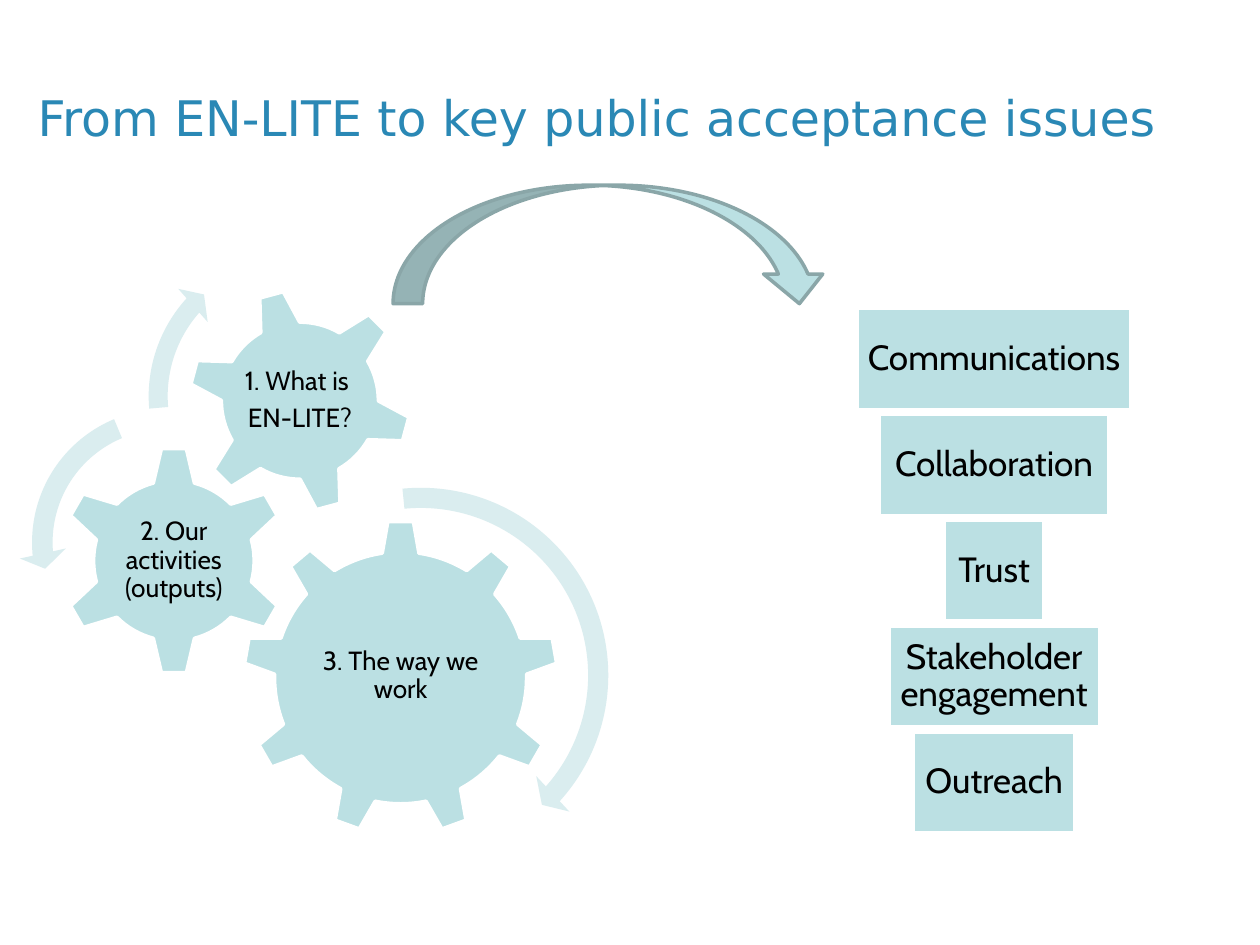
from pptx import Presentation
from pptx.dml.color import RGBColor
from pptx.enum.shapes import MSO_SHAPE
from pptx.enum.text import MSO_ANCHOR, PP_ALIGN
from pptx.util import Inches, Pt

BLACK = RGBColor(0x00, 0x00, 0x00)
WHITE = RGBColor(0xFF, 0xFF, 0xFF)
BLUE = RGBColor(0x2A, 0x88, 0xB5)
TEAL = RGBColor(0xBB, 0xE0, 0xE3)
PALE_TEAL = RGBColor(0xDA, 0xED, 0xEF)
GREY_TEAL = RGBColor(0x8A, 0xA6, 0xA8)

presentation = Presentation()
presentation.slide_width = Inches(10)
presentation.slide_height = Inches(7.5)
slide = presentation.slides.add_slide(presentation.slide_layouts[6])


def add_filled_shape(kind, box, fill, line=None):
    shape = slide.shapes.add_shape(kind, *map(Inches, box))
    shape.shadow.inherit = False
    shape.fill.solid()
    shape.fill.fore_color.rgb = fill
    if line is None:
        shape.line.fill.background()
    else:
        shape.line.color.rgb = line
        shape.line.width = Pt(2)
    return shape


def write_text(shape, lines, inset, paragraph_format, font_format):
    frame = shape.text_frame
    frame.text = "\n".join(lines)
    frame_format = {"word_wrap": True, "vertical_anchor": MSO_ANCHOR.MIDDLE}
    for side in ("left", "top", "right", "bottom"):
        frame_format[f"margin_{side}"] = Inches(inset)
    for name, value in frame_format.items():
        setattr(frame, name, value)
    for paragraph in frame.paragraphs:
        for name, value in paragraph_format.items():
            setattr(paragraph, name, value)
        for run in paragraph.runs:
            run.font.color.rgb = font_format["color"]
            run.font.name = font_format["name"]
            run.font.size = font_format["size"]


label_paragraph = {
    "alignment": PP_ALIGN.CENTER,
    "line_spacing": 0.9,
    "space_after": Pt(5),
}
gear_font = {"name": "Cabin", "size": Pt(15), "color": BLACK}
issue_font = {"name": "Cabin", "size": Pt(20), "color": BLACK}
title_font = {"name": "DejaVu Sans", "size": Pt(28), "color": BLUE}

title = slide.shapes.add_textbox(Inches(0.2), Inches(0.3), Inches(9.53), Inches(1.25))
write_text(title, ["From EN-LITE to key public acceptance issues"], 0.1,
           {"alignment": PP_ALIGN.LEFT}, title_font)

gears = [
    (MSO_SHAPE.GEAR_9, (1.93, 4.13, 2.5, 2.5), 0,
     (2.43, 4.72, 1.5, 1.29), ["3. The way we work"]),
    (MSO_SHAPE.GEAR_6, (0.47, 3.54, 1.82, 1.82), 0,
     (0.93, 4, 0.9, 0.9), ["2. Our activities (outputs)"]),
    (MSO_SHAPE.GEAR_6, (1.49, 2.29, 1.78, 1.78), 345,
     (1.88, 2.68, 1, 1), ["1. What is ", "EN-LITE?"]),
]
for kind, box, rotation, label_box, lines in gears:
    gear = add_filled_shape(kind, box, TEAL, WHITE)
    gear.rotation = rotation
    label = slide.shapes.add_textbox(*map(Inches, label_box))
    write_text(label, lines, 0.02, label_paragraph, gear_font)

rotation_arrows = [
    (MSO_SHAPE.CIRCULAR_ARROW, (1.74, 3.76, 3.2, 3.2),
     (0.05, 2.99, 25.16, 158.63, 0.06)),
    (MSO_SHAPE.LEFT_CIRCULAR_ARROW, (0.15, 3.14, 2.33, 2.33),
     (0.07, 4.3, 104.89, 148.38, 0.08)),
    (MSO_SHAPE.CIRCULAR_ARROW, (1.08, 1.89, 2.51, 2.51),
     (0.06, 3.94, 133.14, 105.08, 0.07)),
]
for kind, box, adjustments in rotation_arrows:
    arrow = add_filled_shape(kind, box, PALE_TEAL)
    for index, value in enumerate(adjustments):
        arrow.adjustments[index] = value

issues = [
    ("Communications", 2.17),
    ("Collaboration", 1.82),
    ("Trust", 0.79),
    ("Stakeholder engagement", 1.67),
    ("Outreach", 1.28),
]
issue_center, issue_top, issue_height, issue_pitch = 7.89, 2.45, 0.8, 0.84
for index, (issue, width) in enumerate(issues):
    box = (issue_center - width / 2, issue_top + index * issue_pitch, width, issue_height)
    rectangle = add_filled_shape(MSO_SHAPE.RECTANGLE, box, TEAL, WHITE)
    write_text(rectangle, [issue], 0.06, label_paragraph, issue_font)

add_filled_shape(MSO_SHAPE.CURVED_DOWN_ARROW, (3.12, 1.47, 3.46, 0.94), TEAL, GREY_TEAL)

presentation.save("out.pptx")
